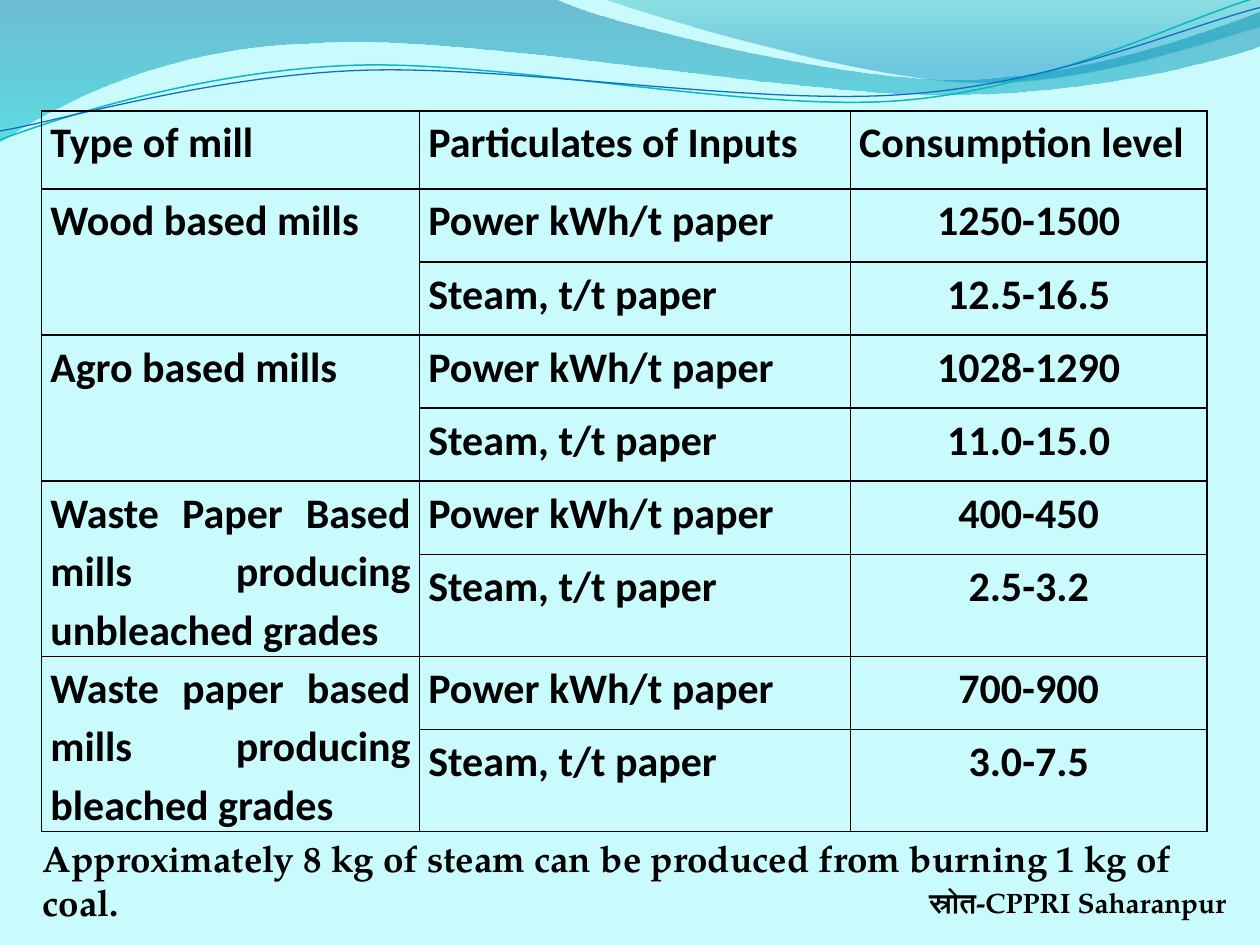
from lxml import etree
from pptx import Presentation, util as u
from pptx.dml.color import RGBColor
from pptx.enum import text
from pptx.oxml.ns import qn

COLORS = {
    "background": "C9FAFC", "ink": "000000",
    "wave_top": "0074A1", "wave_bottom": "00C6CF",
    "crest_top": "00A1A9", "crest_bottom": "008BBF",
    "teal_line": "0AB8BF", "blue_line": "0F6FC6",
}
WAVE = [
    (0, 0), [(4.4, -0.01)], [(4.76, 0.17), (6.64, 0.63), (7.58, 0.63)],
    [(8.53, 0.63), (9.58, 0.26), (10, 0.09)], [(10.01, 0.36)],
    [(9.83, 0.44), (8.7, 0.76), (7.46, 0.75)],
    [(6.22, 0.75), (3.82, 0.28), (2.57, 0.34)],
    [(1.29, 0.36), (0.46, 0.83), (-0.01, 1.13)], [(0, 0)],
]
CREST = [
    (4.79, -0.01), [(5.09, 0.11), (6.82, 0.62), (7.69, 0.65)],
    [(8.56, 0.69), (9.61, 0.32), (10, 0.21)], [(10, 0)], [(4.79, -0.01)],
]
TEAL_CURVE = [
    (0, 1.11), [(0.48, 0.93), (1.58, 0.57), (2.77, 0.52)],
    [(3.95, 0.47), (5.93, 0.89), (7.13, 0.8)],
    [(8.33, 0.71), (9.38, 0.15), (9.98, -0.02)],
]
BLUE_CURVE = [
    (0, 1.04), [(0.47, 0.96), (1.64, 0.61), (2.83, 0.56)],
    [(4.03, 0.51), (5.97, 0.84), (7.17, 0.75)],
    [(8.36, 0.67), (9.41, 0.21), (10, 0.06)],
]
HEADINGS = ["Type of mill", "Particulates of Inputs", "Consumption level"]
INPUTS = ["Power kWh/t paper", "Steam, t/t paper"]
MILLS = [
    ("Wood based mills", ["1250-1500", "12.5-16.5"]),
    ("Agro based mills", ["1028-1290", "11.0-15.0"]),
    ("Waste Paper Based mills producing unbleached grades", ["400-450", "2.5-3.2"]),
    ("Waste paper based mills producing bleached grades", ["700-900", "3.0-7.5"]),
]


def color(name):
    """Return a named colour."""
    return RGBColor.from_string(COLORS[name])


def add_outline(page, outline, closed):
    """Draw a freeform whose three-point sides are cubic curves."""
    start, *sides = outline
    builder = page.shapes.build_freeform(*map(u.Inches, start))
    corners = [tuple(map(u.Inches, side[-1])) for side in sides]
    builder.add_line_segments(corners, close=closed)
    shape = builder.convert_to_shape()
    shape.shadow.inherit = False
    lines = list(shape._element.spPr.iter(qn("a:lnTo")))
    for line, side in zip(lines, sides):
        if len(side) == 3:
            curve = etree.Element(qn("a:cubicBezTo"))
            for x, y in side:
                etree.SubElement(curve, qn("a:pt"), x=str(u.Inches(x) - shape.left),
                                 y=str(u.Inches(y) - shape.top))
            line.getparent().replace(line, curve)
    return shape


def add_band(page, outline, stops):
    """Draw a closed band with a translucent vertical gradient."""
    shape = add_outline(page, outline, True)
    shape.line.fill.background()
    shape.fill.gradient()
    shape.fill.gradient_angle = 270
    for stop, (place, name, _) in zip(shape.fill.gradient_stops, stops):
        stop.position = place
        stop.color.rgb = color(name)
    tints = shape._element.spPr.iter(qn("a:srgbClr"))
    for tint, (_, _, opacity) in zip(tints, stops):
        etree.SubElement(tint, qn("a:alpha"), val=str(opacity * 1000))


def add_curve(page, outline, name, width):
    """Draw an open curved line."""
    shape = add_outline(page, outline, False)
    shape.fill.background()
    shape.line.color.rgb = color(name)
    shape.line.width = u.Pt(width)


def write(frame, words, size, font, align, spacing=None):
    """Write one bold paragraph into a text frame."""
    frame.word_wrap = True
    para = frame.paragraphs[0]
    para.alignment = align
    para.line_spacing = spacing
    span = para.add_run()
    span.text = words
    span.font.size = u.Pt(size)
    span.font.name = font
    span.font.bold = True
    span.font.color.rgb = color("ink")


def add_text(page, place, words, size, align):
    """Add a text box that grows with its words."""
    box = page.shapes.add_textbox(*map(u.Inches, place))
    write(box.text_frame, words, size, "TeX Gyre Pagella", align)
    box.text_frame.auto_size = text.MSO_AUTO_SIZE.SHAPE_TO_FIT_TEXT


def style_cell(cell):
    """Give a cell its margins, thin borders and no fill."""
    cell.margin_left = cell.margin_right = u.Inches(0.07)
    cell.margin_top = cell.margin_bottom = 0
    properties = cell._tc.get_or_add_tcPr()
    for side in ("lnL", "lnR", "lnT", "lnB"):
        border = etree.SubElement(properties, qn(f"a:{side}"), w=str(u.Pt(1)))
        fill = etree.SubElement(border, qn("a:solidFill"))
        etree.SubElement(fill, qn("a:srgbClr"), val=COLORS["ink"])
    cell.fill.background()


def add_mill_table(page):
    """Add the table of power and steam use by type of mill."""
    rows = [HEADINGS]
    for mill, levels in MILLS:
        rows += zip([mill, ""], INPUTS, levels)
    place = map(u.Inches, (0.33, 0.88, 9.25, 5.69))
    holder = page.shapes.add_table(len(rows), len(HEADINGS), *place)
    table = holder.table
    table.first_row = table.horz_banding = False
    for column, width in zip(table.columns, (3, 3.42, 2.83)):
        column.width = u.Inches(width)
    for r, words in enumerate(rows):
        table.rows[r].height = u.Inches(0.58 if r else 0.62)
        for c, word in enumerate(words):
            cell = table.cell(r, c)
            style_cell(cell)
            centred = r > 0 and c == 2
            align = text.PP_ALIGN.CENTER if centred else text.PP_ALIGN.JUSTIFY
            if word:
                write(cell.text_frame, word, 24, "Calibri", align, 1.14)
    for r in range(1, len(rows), 2):
        table.cell(r, 0).merge(table.cell(r + 1, 0))
    holder.height = u.Inches(5.69)


def main():
    """Build the slide and save it."""
    deck = Presentation()
    deck.slide_width, deck.slide_height = u.Inches(10), u.Inches(7.5)
    page = deck.slides.add_slide(deck.slide_layouts[6])
    page.background.fill.solid()
    page.background.fill.fore_color.rgb = color("background")
    add_band(page, WAVE, [(0, "wave_top", 45), (1, "wave_bottom", 55)])
    add_band(page, CREST, [(0, "crest_top", 30), (0.8, "crest_bottom", 45)])
    add_curve(page, TEAL_CURVE, "teal_line", 0.85)
    add_curve(page, BLUE_CURVE, "blue_line", 0.75)
    add_mill_table(page)
    add_text(page, (5.58, 6.98, 4.25, 0.37), "स्रोत-CPPRI Saharanpur", 16,
             text.PP_ALIGN.RIGHT)
    add_text(page, (0.24, 6.58, 9.33, 0.81),
             "Approximately 8 kg of steam can be produced from burning 1 kg of coal.",
             21, text.PP_ALIGN.LEFT)
    deck.save("out.pptx")


if __name__ == "__main__":
    main()
